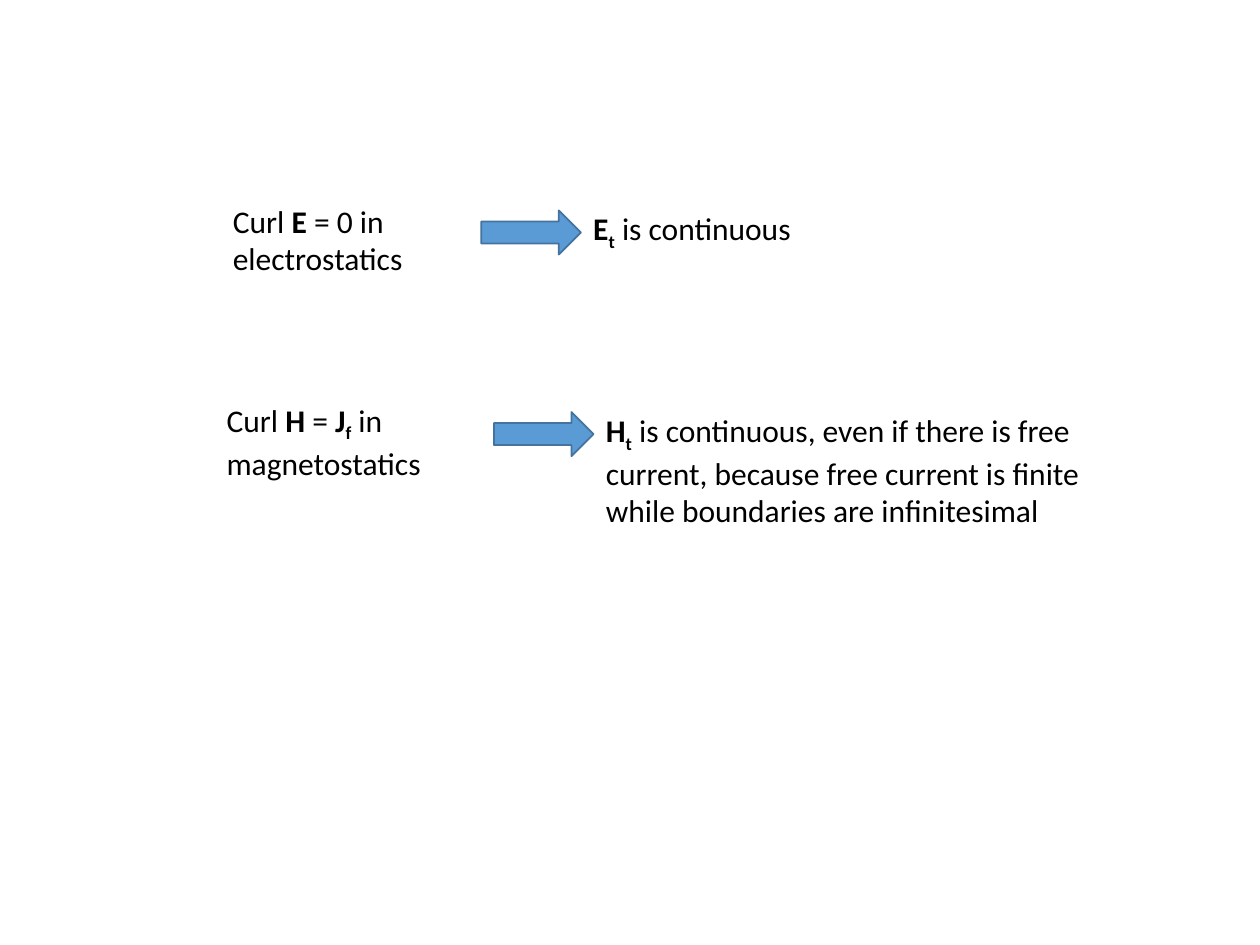
from pptx import Presentation
from pptx.dml.color import RGBColor
from pptx.enum.shapes import MSO_SHAPE
from pptx.enum.text import MSO_AUTO_SIZE
from pptx.util import Inches, Pt

PLAIN, BOLD, SUBSCRIPT = "plain", "bold", "bold subscript"

# Box: left, top, width, height in inches, then its spans
STATEMENTS = [
    ((1.75, 1.55, 1.74, 0.71),
     [("Curl ", PLAIN), ("E", BOLD), (" = 0 in electrostatics", PLAIN)]),
    ((4.61, 1.61, 2.46, 0.4),
     [("E", BOLD), ("t", SUBSCRIPT), (" is continuous", PLAIN)]),
    ((1.7, 3.13, 2.01, 0.71),
     [("Curl ", PLAIN), ("H", BOLD), (" = ", PLAIN), ("J", BOLD),
      ("f", SUBSCRIPT), (" in magnetostatics", PLAIN)]),
    ((4.71, 3.21, 4.49, 1.01),
     [("H", BOLD), ("t", SUBSCRIPT),
      (" is continuous, even if there is free current, because free current "
       "is finite while boundaries are infinitesimal", PLAIN)]),
]
ARROWS = [(3.82, 1.67), (3.92, 3.27)]
ARROW_SIZE = (0.79, 0.35)


def color(value):
    return RGBColor.from_string(value)


def add_statement(page, place, spans):
    box = page.shapes.add_textbox(*map(Inches, place))
    frame = box.text_frame
    frame.word_wrap = True
    frame.auto_size = MSO_AUTO_SIZE.SHAPE_TO_FIT_TEXT
    para = frame.paragraphs[0]
    for text, style in spans:
        span = para.add_run()
        span.text = text
        span.font.name = "Calibri"
        span.font.size = Pt(18)
        span.font.color.rgb = color("000000")
        span.font.bold = style != PLAIN
        if style == SUBSCRIPT:
            span._r.get_or_add_rPr().set("baseline", "-25000")


def add_arrow(page, corner):
    arrow = page.shapes.add_shape(
        MSO_SHAPE.RIGHT_ARROW, *map(Inches, corner + ARROW_SIZE))
    arrow.shadow.inherit = False
    arrow.fill.solid()
    arrow.fill.fore_color.rgb = color("5B9BD5")
    arrow.line.color.rgb = color("43739E")
    arrow.line.width = Pt(1)


def main():
    deck = Presentation()
    deck.slide_width, deck.slide_height = Inches(10), Inches(7.5)
    page = deck.slides.add_slide(deck.slide_layouts[6])
    for place, spans in STATEMENTS:
        add_statement(page, place, spans)
    for corner in ARROWS:
        add_arrow(page, corner)
    deck.save("out.pptx")


if __name__ == "__main__":
    main()
